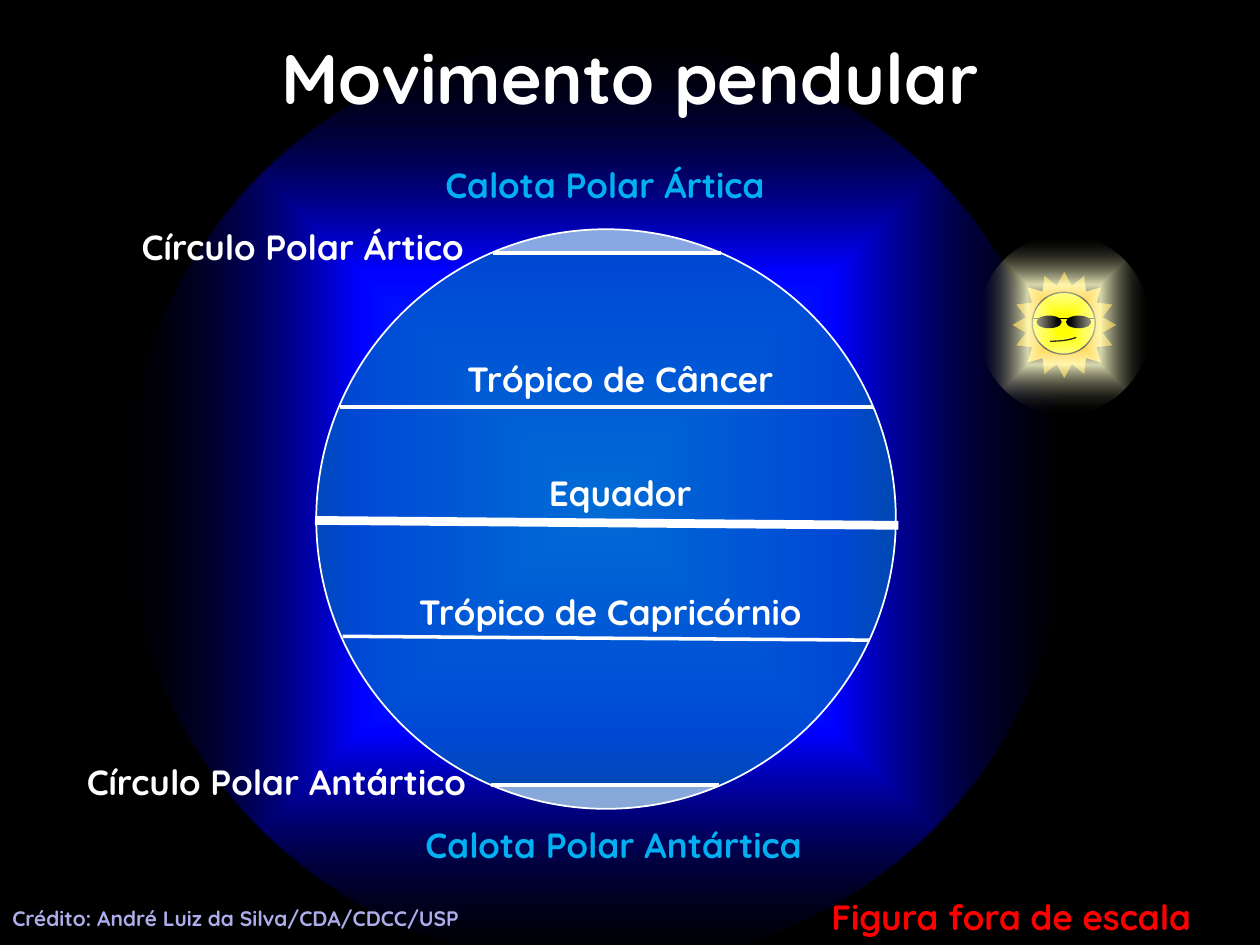
"""Build the slide on the Earth's zones and the Sun's pendular movement."""
import lxml.etree
import pptx
import pptx.dml.color
import pptx.enum.shapes
import pptx.enum.text
import pptx.oxml
import pptx.oxml.ns
import pptx.util

Pt = pptx.util.Pt
qn = pptx.oxml.ns.qn
MSO = pptx.enum.shapes.MSO_SHAPE
STRAIGHT = pptx.enum.shapes.MSO_CONNECTOR.STRAIGHT
ALIGN = pptx.enum.text.PP_ALIGN
NS = 'xmlns:a="http://schemas.openxmlformats.org/drawingml/2006/main"'


def color(fmt, value, alpha=100):
    """Set a solid fill or font colour from a hex string, or a gradient from stops."""
    if isinstance(value, str):
        if hasattr(fmt, "solid"):
            fmt.solid()
            fmt = fmt.fore_color
        else:
            fmt = fmt.color
        fmt.rgb = pptx.dml.color.RGBColor.from_string(value)
        return
    fmt.gradient()


def paint(sp, fill=None, line=None, width=0.75, alpha=100):
    """Style a shape or a connector; a list as fill gives gradient stops."""
    pr = sp.element.spPr
    if sp.element.tag == qn("p:cxnSp"):
        lxml.etree.SubElement(pr, qn("a:effectLst"))
    else:
        sp.shadow.inherit = False
        if fill is None:
            sp.fill.background()
        else:
            color(sp.fill, fill)
        if isinstance(fill, list):
            stops = "".join(
                f'<a:gs pos="{pos * 1000}"><a:srgbClr val="{c}"><a:alpha val="{a * 1000}"/></a:srgbClr></a:gs>'
                for pos, c, a in fill)
            pr.replace(pr.find(qn("a:gradFill")), pptx.oxml.parse_xml(
                f'<a:gradFill {NS} rotWithShape="1"><a:gsLst>{stops}</a:gsLst><a:path path="shape">'
                '<a:fillToRect l="50000" t="50000" r="50000" b="50000"/></a:path></a:gradFill>'))
        elif alpha < 100:
            clr = pr.find(qn("a:solidFill")).find(qn("a:srgbClr"))
            lxml.etree.SubElement(clr, qn("a:alpha"), val=str(alpha * 1000))
    if line:
        color(sp.line.fill, line)
        sp.line.width = Pt(width)
    else:
        sp.line.fill.background()


prs = pptx.Presentation()
prs.slide_width, prs.slide_height = Pt(720), Pt(540)
s = prs.slides.add_slide(prs.slide_layouts[5])
color(s.background.fill, "000000")

sp = s.shapes.add_shape(MSO.OVAL, Pt(71.3), Pt(20.9), Pt(540), Pt(532))
paint(sp, [(0, "0066FF", 100), (50, "0000FF", 100), (100, "000000", 20)])
sp = s.shapes.add_shape(MSO.OVAL, Pt(180.7), Pt(131), Pt(331.2), Pt(331.2))
sp.rotation = 47.7
paint(sp, "0070C0", "FFFFFF", 1, alpha=65)

for x1, y1, x2, y2, width in [
    (180, 297.4, 513.4, 300.2, 5),
    (194.4, 232.6, 499, 232.6, 2),
    (195.8, 363.6, 496.8, 365.8, 2),
    (281.5, 144.7, 411.8, 144.7, 2),
    (280.8, 448.6, 411.1, 448.6, 2),
]:
    sp = s.shapes.add_connector(STRAIGHT, Pt(x1), Pt(y1), Pt(x2), Pt(y2))
    paint(sp, line="FFFFFF", width=width)

for rotation, start in [(0, 40.23), (180, 40.46)]:
    sp = s.shapes.add_shape(MSO.CHORD, Pt(180), Pt(131), Pt(331.2), Pt(331.2))
    sp.adjustments[0], sp.adjustments[1] = start, 67.78
    sp.rotation = rotation
    paint(sp, "FFFFFF", alpha=53)

sun = s.shapes.add_group_shape().shapes
for kind, x, y, w, h, fill in [
    (MSO.STAR_16_POINT, 577.6, 154.4, 61.2, 62.6, "FFC000"),
    (MSO.OVAL, 589.9, 167, 36, 35.4, "FFFF00"),
    (MSO.OVAL, 592.6, 180.7, 13.7, 6.5, "000000"),
    (MSO.OVAL, 609.5, 180.7, 13.7, 6.5, "000000"),
]:
    sp = sun.add_shape(kind, Pt(x), Pt(y), Pt(w), Pt(h))
    paint(sp, fill, "000000")
sp = sun.add_connector(STRAIGHT, Pt(589.9), Pt(182), Pt(625.7), Pt(182))
paint(sp, line="000000")
curve = [(600, 195), (605.6, 195), (611, 194.5), (615, 192.8)]
points = []
for t in [i / 8 for i in range(9)]:
    weights = ((1 - t) ** 3, 3 * t * (1 - t) ** 2, 3 * t * t * (1 - t), t ** 3)
    points.append([Pt(sum(k * p[axis] for k, p in zip(weights, curve))) for axis in (0, 1)])
fb = sun.build_freeform(*points[0])
fb.add_line_segments(points[1:], close=False)
paint(fb.convert_to_shape(), line="000000")
sp = sun.add_shape(MSO.OVAL, Pt(558.7), Pt(133.9), Pt(98.6), Pt(103))
paint(sp, [(7, "FFFFFF", 0), (42, "FFFFCC", 85), (100, "000000", 2)])

title = s.shapes.title
s.shapes.element.append(title.element)
title.left, title.top, title.width, title.height = Pt(0), Pt(-1.4), Pt(720), Pt(90)
title.text_frame.vertical_anchor = pptx.enum.text.MSO_ANCHOR.MIDDLE
labels = [(title, "Movimento pendular", 40, "FFFFFF", ALIGN.CENTER)]
for text, x, y, w, h, size, hue, align in [
    ("Círculo Polar Ártico", 8.6, 125.3, 329, 31.5, 20, "FFFFFF", ALIGN.CENTER),
    ("Círculo Polar Antártico", -6.5, 431.3, 329, 31.5, 20, "FFFFFF", ALIGN.CENTER),
    ("Calota Polar Antártica", 223.2, 467.3, 255, 31.5, 20, "00B0F0", ALIGN.CENTER),
    ("Calota Polar Ártica", 218.2, 90, 255, 31.5, 20, "00B0F0", ALIGN.CENTER),
    ("Trópico de Câncer", 190, 200.9, 329, 31.5, 20, "FFFFFF", ALIGN.CENTER),
    ("Trópico de Capricórnio", 184.3, 334, 329, 31.5, 20, "FFFFFF", ALIGN.CENTER),
    ("Equador", 190, 265.7, 329, 31.5, 20, "FFFFFF", ALIGN.CENTER),
    ("Figura fora de escala", 468, 508.3, 255, 31.5, 20, "FF0000", ALIGN.LEFT),
    ("Crédito: André Luiz da Silva/CDA/CDCC/USP", 0, 514, 740, 21.8, 12, "ADADEB", ALIGN.LEFT),
]:
    sp = s.shapes.add_textbox(Pt(x), Pt(y), Pt(w), Pt(h))
    sp.text_frame.word_wrap = True
    sp.text_frame.auto_size = pptx.enum.text.MSO_AUTO_SIZE.SHAPE_TO_FIT_TEXT
    labels.append((sp, text, size, hue, align))

for sp, text, size, hue, align in labels:
    tf = sp.text_frame
    tf.text = text
    p = tf.paragraphs[0]
    p.alignment = align
    r = p.runs[0]
    r.font.name, r.font.size, r.font.bold = "Quicksand", Pt(size), True
    color(r.font.fill, hue)

prs.save("out.pptx")
